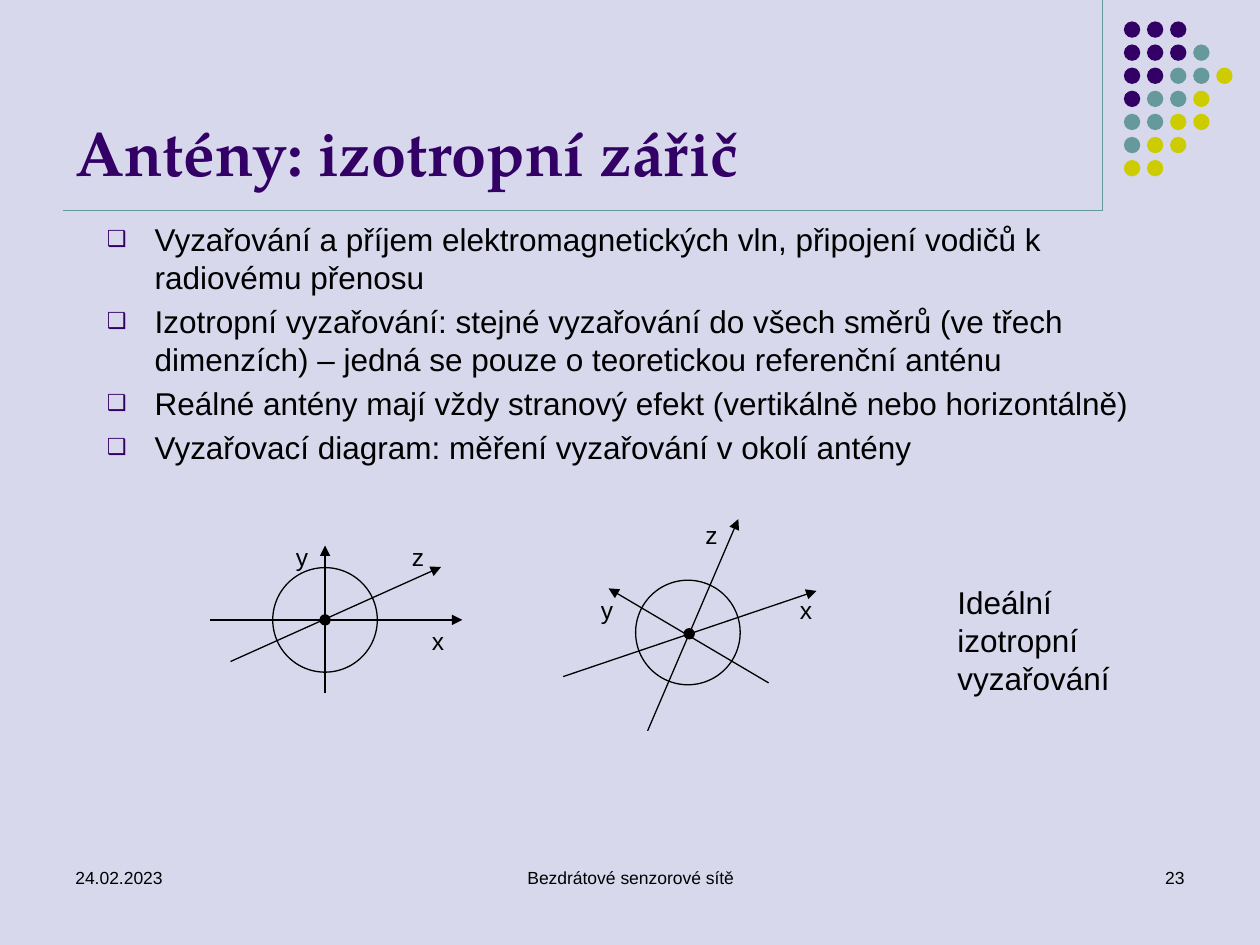
import pptx
import pptx.dml.color
import pptx.enum.shapes
import pptx.enum.text
import pptx.oxml
import pptx.oxml.ns
import pptx.util

WIDTH, HEIGHT = 10, 7.5
PURPLE, TEAL, YELLOW, BLACK, BACKGROUND = "330066", "669999", "CCCC00", "000000", "D8D8EC"
BODY_FONT, TITLE_FONT = "Arial", "TeX Gyre Pagella"

TITLE = "Antény: izotropní zářič"
BULLETS = [
    "Vyzařování a příjem elektromagnetických vln, připojení vodičů k radiovému přenosu",
    "Izotropní vyzařování: stejné vyzařování do všech směrů (ve třech dimenzích) – "
    "jedná se pouze o teoretickou referenční anténu",
    "Reálné antény mají vždy stranový efekt (vertikálně nebo horizontálně)",
    "Vyzařovací diagram: měření vyzařování v okolí antény",
]
CAPTION = "Ideální izotropní vyzařování"
FOOTERS = [  # text, left, width, alignment
    ("24.02.2023", 0.5, 2.33, "LEFT"),
    ("Bezdrátové senzorové sítě", 3.42, 3.17, "CENTER"),
    ("23", 7.17, 2.33, "RIGHT"),
]

DOT_ROWS = ["PPP", "PPPT", "PPTTY", "PTTY", "TTYY", "TYY", "YY"]
DOT_COLORS = {"P": PURPLE, "T": TEAL, "Y": YELLOW}
DOT_LEFT, DOT_TOP, DOT_SIZE, DOT_PITCH = 8.92, 0.17, 0.13, 1.1 / 6

RULE_LEFT, RULE_RIGHT, RULE_TOP = 0.5, 8.75, 1.67
CIRCLE_SIZE, CENTER_SIZE = 0.83, 0.08
LABEL_SIZE = (0.3, 0.33)
DIAGRAMS = [
    {
        "circle": (2.58, 4.92), "center": (2.58, 4.92),
        "axes": [((1.67, 4.92), (3.67, 4.92)), ((2.58, 5.5), (2.58, 4.33)),
                 ((1.83, 5.25), (3.5, 4.5))],
        "labels": {"x": (3.33, 4.92), "y": (2.25, 4.25), "z": (3.17, 4.25)},
    },
    {
        "circle": (5.46, 5.02), "center": (5.47, 5.03),
        "axes": [((4.47, 5.37), (6.48, 4.69)), ((6.1, 5.42), (4.83, 4.67)),
                 ((5.14, 5.8), (5.86, 4.12))],
        "labels": {"x": (6.25, 4.67), "y": (4.67, 4.67), "z": (5.5, 4.08)},
    },
]


def color(value):
    return pptx.dml.color.RGBColor.from_string(value)


def inches(*lengths):
    return [pptx.util.Inches(length) for length in lengths]


def add_element(parent, tag, **attributes):
    element = pptx.oxml.ns.qn(tag)
    child = parent.makeelement(element, attributes)
    parent.append(child)
    return child


def add_line(slide, start, end, line_color, arrow=False):
    connector = slide.shapes.add_connector(
        pptx.enum.shapes.MSO_CONNECTOR.STRAIGHT, *inches(*start, *end))
    connector.line.color.rgb = color(line_color)
    connector.line.width = pptx.util.Pt(0.75)
    if arrow:
        add_element(connector.line._get_or_add_ln(), "a:tailEnd", type="triangle")
    add_element(connector._element.spPr, "a:effectLst")


def add_circle(slide, left, top, size, fill=None, line=None):
    shape = slide.shapes.add_shape(
        pptx.enum.shapes.MSO_SHAPE.OVAL, *inches(left, top, size, size))
    shape.shadow.inherit = False
    if fill:
        shape.fill.solid()
        shape.fill.fore_color.rgb = color(fill)
    else:
        shape.fill.background()
    if line:
        shape.line.color.rgb = color(line)
        shape.line.width = pptx.util.Pt(0.75)
    else:
        shape.line.fill.background()


def add_text(slide, box, texts, size, name=BODY_FONT, text_color=BLACK, bold=False,
             alignment="LEFT", anchor="TOP", wrap=True):
    frame = slide.shapes.add_textbox(*inches(*box)).text_frame
    frame.word_wrap = wrap
    frame.vertical_anchor = pptx.enum.text.MSO_ANCHOR[anchor]
    font_format = {"size": pptx.util.Pt(size), "name": name, "bold": bold}
    for index, text in enumerate(texts):
        paragraph = frame.add_paragraph() if index else frame.paragraphs[0]
        paragraph.alignment = pptx.enum.text.PP_ALIGN[alignment]
        run = paragraph.add_run()
        run.text = text
        for attribute, value in font_format.items():
            setattr(run.font, attribute, value)
        run.font.color.rgb = color(text_color)
    return frame


def add_bullet(paragraph):
    paragraph.space_before = pptx.util.Pt(3.6)
    properties = paragraph._p.get_or_add_pPr()
    indent = pptx.util.Inches(0.38)
    properties.set("marL", str(indent))
    properties.set("indent", str(-indent))
    bullet_color = add_element(properties, "a:buClr")
    add_element(bullet_color, "a:srgbClr", val=PURPLE)
    add_element(properties, "a:buSzPct", val="70000")
    add_element(properties, "a:buFont", typeface=BODY_FONT)
    add_element(properties, "a:buChar", char="❑")


def add_diagram(slide, diagram):
    for start, end in diagram["axes"]:
        add_line(slide, start, end, BLACK, arrow=True)
    for part, size, fill in (("center", CENTER_SIZE, BLACK), ("circle", CIRCLE_SIZE, None)):
        x, y = diagram[part]
        add_circle(slide, x - size / 2, y - size / 2, size, fill, BLACK)
    for label, position in diagram["labels"].items():
        add_text(slide, (*position, *LABEL_SIZE), [label], 14, wrap=False)


def main():
    presentation = pptx.Presentation()
    presentation.slide_width, presentation.slide_height = inches(WIDTH, HEIGHT)
    slide = presentation.slides.add_slide(presentation.slide_layouts[6])
    slide.background.fill.solid()
    slide.background.fill.fore_color.rgb = color(BACKGROUND)

    corner = (RULE_RIGHT, RULE_TOP)
    add_line(slide, (RULE_RIGHT, 0), corner, TEAL)
    add_line(slide, (RULE_LEFT, RULE_TOP), corner, TEAL)
    for row, dots in enumerate(DOT_ROWS):
        for column, dot in enumerate(dots):
            add_circle(slide, DOT_LEFT + column * DOT_PITCH, DOT_TOP + row * DOT_PITCH,
                       DOT_SIZE, DOT_COLORS[dot])

    body = add_text(slide, (0.75, 1.7, 8.5, 4.96), BULLETS, 18)
    for paragraph in body.paragraphs:
        add_bullet(paragraph)
    add_text(slide, (RULE_LEFT, 0.13, RULE_RIGHT - RULE_LEFT, 1.42), [TITLE], 36,
             TITLE_FONT, PURPLE, bold=True, anchor="BOTTOM")

    for diagram in DIAGRAMS:
        add_diagram(slide, diagram)
    add_text(slide, (7.5, 4.58, 1.75, 1.01), [CAPTION], 18)
    for text, left, width, alignment in FOOTERS:
        add_text(slide, (left, 6.83, width, 0.5), [text], 10, alignment=alignment)

    presentation.save("out.pptx")


if __name__ == "__main__":
    main()
